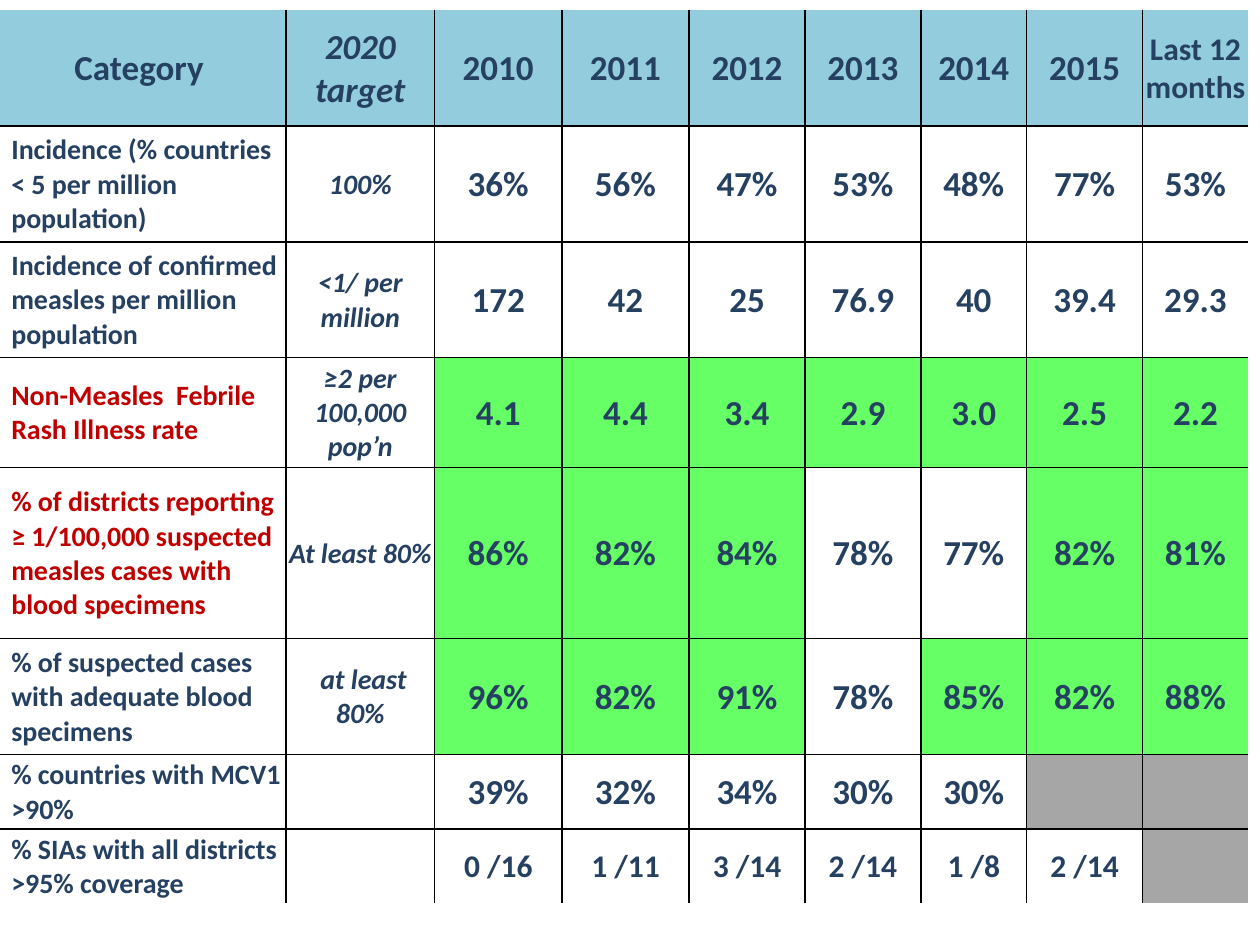
from dataclasses import dataclass

from lxml import etree
from pptx import Presentation
from pptx import util as u
from pptx.dml.color import RGBColor
from pptx.enum import text
from pptx.oxml.ns import qn


@dataclass(frozen=True)
class Theme:
    font: str = "Calibri"
    ink: str = "254061"
    alert: str = "C00000"
    header: str = "93CDDD"
    met: str = "66FF66"
    missing: str = "A6A6A6"
    line: str = "000000"
    large: int = 20
    medium: int = 18
    small: int = 16
    rule: float = 1


@dataclass(frozen=True)
class Indicator:
    label: str
    target: str
    values: str
    floor: float = None  # values at or above it are shown as met
    alert: bool = False
    size: int = Theme.large


THEME = Theme()
TABLE_TOP = 0.08
COLUMNS = [2.27, 1.18, 1.01, 1.01, 0.92, 0.92, 0.84, 0.92, 0.84]
ROWS = [0.92, 0.92, 0.92, 0.87, 1.36, 0.92, 0.59, 0.59]
HEADINGS = ["Category ", "2020 target", "2010", "2011", "2012", "2013",
            "2014", "2015", "Last 12 months"]
INDICATORS = [
    Indicator("Incidence (% countries  < 5 per million population)", "100%",
              "36%,56%,47%,53%,48%,77%,53%"),
    Indicator("Incidence of confirmed measles per million population",
              "<1/ per million", "172,42,25,76.9,40,39.4,29.3"),
    Indicator("Non-Measles  Febrile Rash Illness rate",
              "≥2 per 100,000 pop’n", "4.1,4.4,3.4,2.9,3.0,2.5,2.2",
              floor=2, alert=True),
    Indicator("% of districts reporting ≥ 1/100,000 suspected measles cases "
              "with blood specimens", "At least 80% ",
              "86%,82%,84%,78%,77%,82%,81%", floor=80, alert=True),
    Indicator("% of suspected cases with adequate blood specimens",
              " at least 80%", "96%,82%,91%,78%,85%,82%,88%", floor=80),
    Indicator("% countries with MCV1 >90%", "", "39%,32%,34%,30%,30%,,"),
    Indicator("% SIAs with all districts >95% coverage", "",
              "0 /16,1 /11,3 /14,2 /14,1 /8,2 /14,", size=THEME.medium),
]


def write_cell(cell, words, size, color=THEME.ink, italic=False, left=False):
    cell.vertical_anchor = text.MSO_ANCHOR.MIDDLE
    cell.margin_left = u.Inches(0.09 if left else 0.01)
    cell.margin_right = cell.margin_top = u.Inches(0.01)
    cell.margin_bottom = 0
    para = cell.text_frame.paragraphs[0]
    para.text = words
    para.alignment = text.PP_ALIGN.LEFT if left else text.PP_ALIGN.CENTER
    for span in para.runs:
        span.font.name = THEME.font
        span.font.size = u.Pt(size)
        span.font.bold = True
        span.font.italic = italic
        span.font.color.rgb = RGBColor.from_string(color)


def fill_cell(cell, color=None):
    if color:
        cell.fill.solid()
        cell.fill.fore_color.rgb = RGBColor.from_string(color)
    else:
        cell.fill.background()


def rule_cell(cell, edges):
    """Draw the named edges (L, R, T, B) and clear the others."""
    properties = cell._tc.get_or_add_tcPr()
    for place, edge in enumerate("LRTB"):
        line = etree.Element(qn(f"a:ln{edge}"), w=str(u.Pt(THEME.rule)))
        if edge in edges:
            paint = etree.SubElement(line, qn("a:solidFill"))
            etree.SubElement(paint, qn("a:srgbClr"), val=THEME.line)
        else:
            etree.SubElement(line, qn("a:noFill"))
        properties.insert(place, line)


def inner_edges(row, column):
    return {edge for edge, inside in (
        ("L", column > 0), ("R", column < len(COLUMNS) - 1),
        ("T", row > 0), ("B", row < len(ROWS) - 1)) if inside}


def add_grid(page):
    frame = page.shapes.add_table(
        len(ROWS), len(COLUMNS), 0, u.Inches(TABLE_TOP),
        u.Inches(sum(COLUMNS)), u.Inches(sum(ROWS)))
    table = frame.table
    table.first_row = table.horz_banding = False
    for column, width in zip(table.columns, COLUMNS):
        column.width = u.Inches(width)
    for row, height in zip(table.rows, ROWS):
        row.height = u.Inches(height)
    return table


def write_header(table):
    for column, heading in enumerate(HEADINGS):
        cell = table.cell(0, column)
        last = column == len(HEADINGS) - 1
        write_cell(cell, heading, THEME.medium if last else THEME.large,
                   italic=column == 1)
        fill_cell(cell, THEME.header)


def value_fill(value, floor):
    if not value:
        return THEME.missing
    if floor is not None and float(value.rstrip("%")) >= floor:
        return THEME.met
    return None


def write_indicator(table, row, indicator):
    label, target = table.cell(row, 0), table.cell(row, 1)
    write_cell(label, indicator.label, THEME.small,
               THEME.alert if indicator.alert else THEME.ink, left=True)
    write_cell(target, indicator.target, THEME.small, italic=True)
    fill_cell(label)
    fill_cell(target)
    for column, value in enumerate(indicator.values.split(","), start=2):
        cell = table.cell(row, column)
        write_cell(cell, value, indicator.size)
        fill_cell(cell, value_fill(value, indicator.floor))


def main():
    deck = Presentation()
    deck.slide_width, deck.slide_height = u.Inches(10), u.Inches(7.5)
    page = deck.slides.add_slide(deck.slide_layouts[6])
    table = add_grid(page)
    write_header(table)
    for row, indicator in enumerate(INDICATORS, start=1):
        write_indicator(table, row, indicator)
    for row in range(len(ROWS)):
        for column in range(len(COLUMNS)):
            rule_cell(table.cell(row, column), inner_edges(row, column))
    deck.save("out.pptx")


if __name__ == "__main__":
    main()
